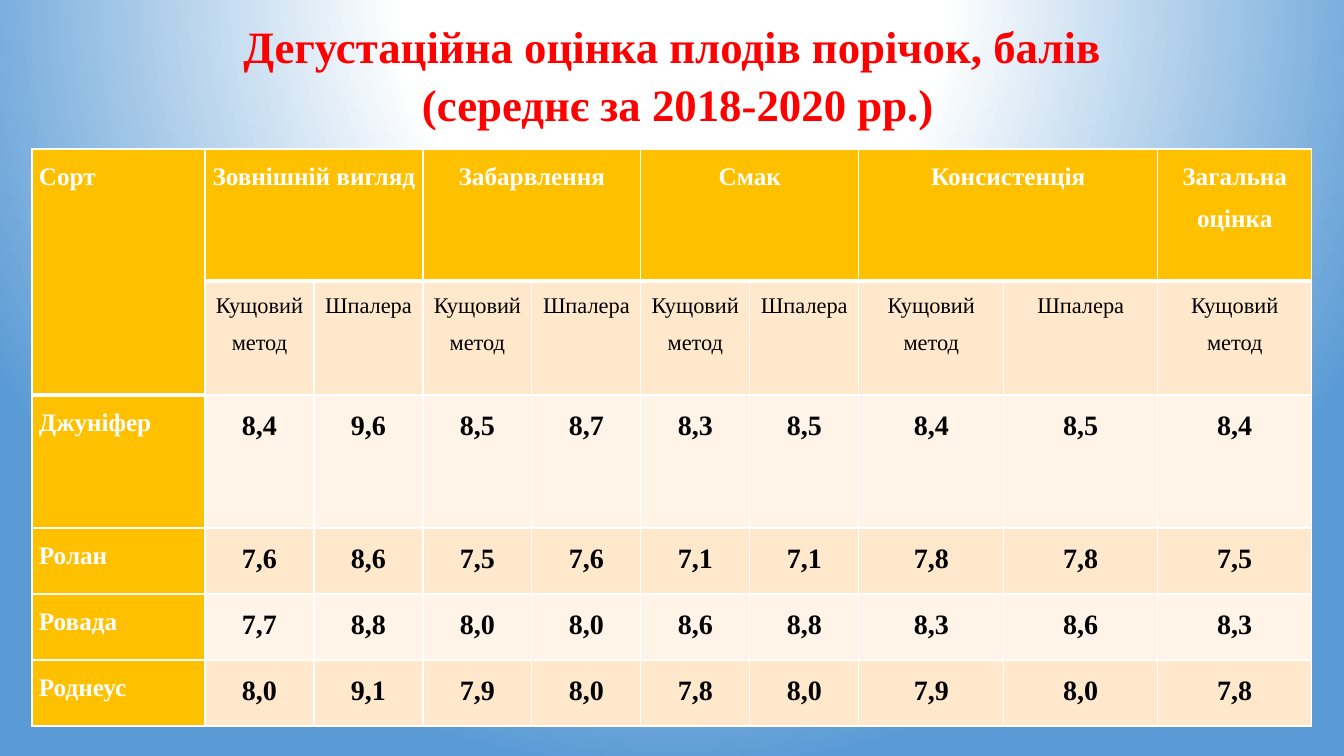
from dataclasses import dataclass

from pptx import Presentation
from pptx import util as u
from pptx.dml.color import RGBColor
from pptx.enum import text
from pptx.oxml import parse_xml
from pptx.oxml.ns import nsdecls

PX = 914400 / 100.8
FONT = "Times New Roman"
WHITE, BLACK, RED, BLUE = "FFFFFF", "000000", "FF0000", "5B9BD5"
GOLD, PEACH, CREAM = "FFC000", "FFE8CC", "FFF4E7"
COLUMN_WIDTHS = [173, *[109] * 6, 145, 154, 154]
ROW_HEIGHTS = [132, 114, 133, 66, 66, 66]
TITLE_LINES = ["Дегустаційна оцінка плодів порічок, балів ", "(середнє за 2018-2020 рр.)"]
METHODS = ["Кущовий метод", "Шпалера"]


@dataclass
class Style:
    size: int
    color: str
    bold: bool
    align: text.PP_ALIGN
    spacing: float = 1.5


@dataclass
class Criterion:
    name: str
    methods: int = 2


@dataclass
class Variety:
    name: str
    scores: str


CENTER = text.PP_ALIGN.CENTER
TITLE = Style(32, RED, True, CENTER, 1.07)
CORNER = Style(18, WHITE, True, text.PP_ALIGN.JUSTIFY)
CRITERION = Style(18, WHITE, True, CENTER)
METHOD = Style(16, BLACK, False, CENTER)
VARIETY = Style(18, WHITE, True, text.PP_ALIGN.LEFT)
SCORE = Style(20, BLACK, True, CENTER)

CRITERIA = [
    Criterion("Зовнішній вигляд"),
    Criterion("Забарвлення"),
    Criterion("Смак"),
    Criterion("Консистенція"),
    Criterion("Загальна оцінка", 1),
]
VARIETIES = [
    Variety("Джуніфер", "8,4 9,6 8,5 8,7 8,3 8,5 8,4 8,5 8,4"),
    Variety("Ролан", "7,6 8,6 7,5 7,6 7,1 7,1 7,8 7,8 7,5"),
    Variety("Ровада", "7,7 8,8 8,0 8,0 8,6 8,8 8,3 8,6 8,3"),
    Variety("Роднеус", "8,0 9,1 7,9 8,0 7,8 8,0 7,9 8,0 7,8"),
]


def px(length: int) -> u.Emu:
    return u.Emu(round(length * PX))


def rgb(color: str) -> RGBColor:
    return RGBColor.from_string(color)


def format_paragraph(paragraph, style: Style) -> None:
    paragraph.alignment = style.align
    paragraph.line_spacing = style.spacing
    paragraph.space_before = u.Pt(0)
    font = paragraph.font
    font.name, font.size, font.bold = FONT, u.Pt(style.size), style.bold
    font.color.rgb = rgb(style.color)


def paint_background(slide) -> None:
    stops = "".join(
        f'<a:gs pos="{position * 1000}"><a:srgbClr val="{color}"/></a:gs>'
        for position, color in [(0, WHITE), (35, WHITE), (100, BLUE)]
    )
    slide.element.cSld.insert(0, parse_xml(
        f'<p:bg {nsdecls("p", "a")}><p:bgPr><a:gradFill rotWithShape="1">'
        f'<a:gsLst>{stops}</a:gsLst><a:path path="circle">'
        '<a:fillToRect l="50000" t="-80000" r="50000" b="180000"/></a:path>'
        '</a:gradFill><a:effectLst/></p:bgPr></p:bg>'
    ))


def write_title(slide) -> None:
    title = slide.shapes.title
    title.left, title.top, title.width, title.height = map(px, (32, 10, 1292, 126))
    frame = title.text_frame
    frame.text = "\n".join(TITLE_LINES)
    frame.word_wrap = True
    frame.vertical_anchor = text.MSO_ANCHOR.TOP
    frame.auto_size = text.MSO_AUTO_SIZE.SHAPE_TO_FIT_TEXT
    for paragraph in frame.paragraphs:
        format_paragraph(paragraph, TITLE)


def draw_borders(cell, row: int, column: int) -> None:
    header_end = 1 if column == 0 else 0
    widths = {
        "L": 1,
        "R": 1,
        "T": 3 if row == header_end + 1 else 1,
        "B": 3 if row == header_end or row == 0 else 1,
    }
    properties = cell._tc.get_or_add_tcPr()
    for side, width in widths.items():
        properties.append(parse_xml(
            f'<a:ln{side} {nsdecls("a")} w="{u.Pt(width)}"><a:solidFill>'
            f'<a:srgbClr val="{WHITE}"/></a:solidFill></a:ln{side}>'
        ))


def write_cell(cell, content: str, style: Style) -> None:
    cell.text = content
    format_paragraph(cell.text_frame.paragraphs[0], style)


def draw_scores(slide) -> None:
    table = slide.shapes.add_table(
        len(ROW_HEIGHTS), len(COLUMN_WIDTHS),
        px(32), px(149), px(sum(COLUMN_WIDTHS)), px(sum(ROW_HEIGHTS)),
    ).table
    table.first_row = table.horz_banding = False
    for column, width in zip(table.columns, COLUMN_WIDTHS):
        column.width = px(width)
    for row, height in zip(table.rows, ROW_HEIGHTS):
        row.height = px(height)
    for row in range(len(ROW_HEIGHTS)):
        for column in range(len(COLUMN_WIDTHS)):
            cell = table.cell(row, column)
            draw_borders(cell, row, column)
            cell.margin_left = cell.margin_right = px(7)
            cell.margin_top = cell.margin_bottom = 0
            cell.fill.solid()
            band = PEACH if row % 2 else CREAM
            cell.fill.fore_color.rgb = rgb(GOLD if row == 0 or column == 0 else band)

    table.cell(0, 0).merge(table.cell(1, 0))
    write_cell(table.cell(0, 0), "Сорт", CORNER)
    column = 1
    for criterion in CRITERIA:
        heading = table.cell(0, column)
        if criterion.methods > 1:
            heading.merge(table.cell(0, column + criterion.methods - 1))
        write_cell(heading, criterion.name, CRITERION)
        for method in METHODS[:criterion.methods]:
            write_cell(table.cell(1, column), method, METHOD)
            column += 1
    for row, variety in enumerate(VARIETIES, 2):
        write_cell(table.cell(row, 0), variety.name, VARIETY)
        for column, score in enumerate(variety.scores.split(), 1):
            write_cell(table.cell(row, column), score, SCORE)


def main() -> None:
    """Build the slide with the tasting scores of redcurrant varieties."""
    deck = Presentation()
    deck.slide_width, deck.slide_height = px(1344), px(756)
    slide = deck.slides.add_slide(deck.slide_layouts[5])
    paint_background(slide)
    write_title(slide)
    draw_scores(slide)
    deck.save("out.pptx")


if __name__ == "__main__":
    main()
